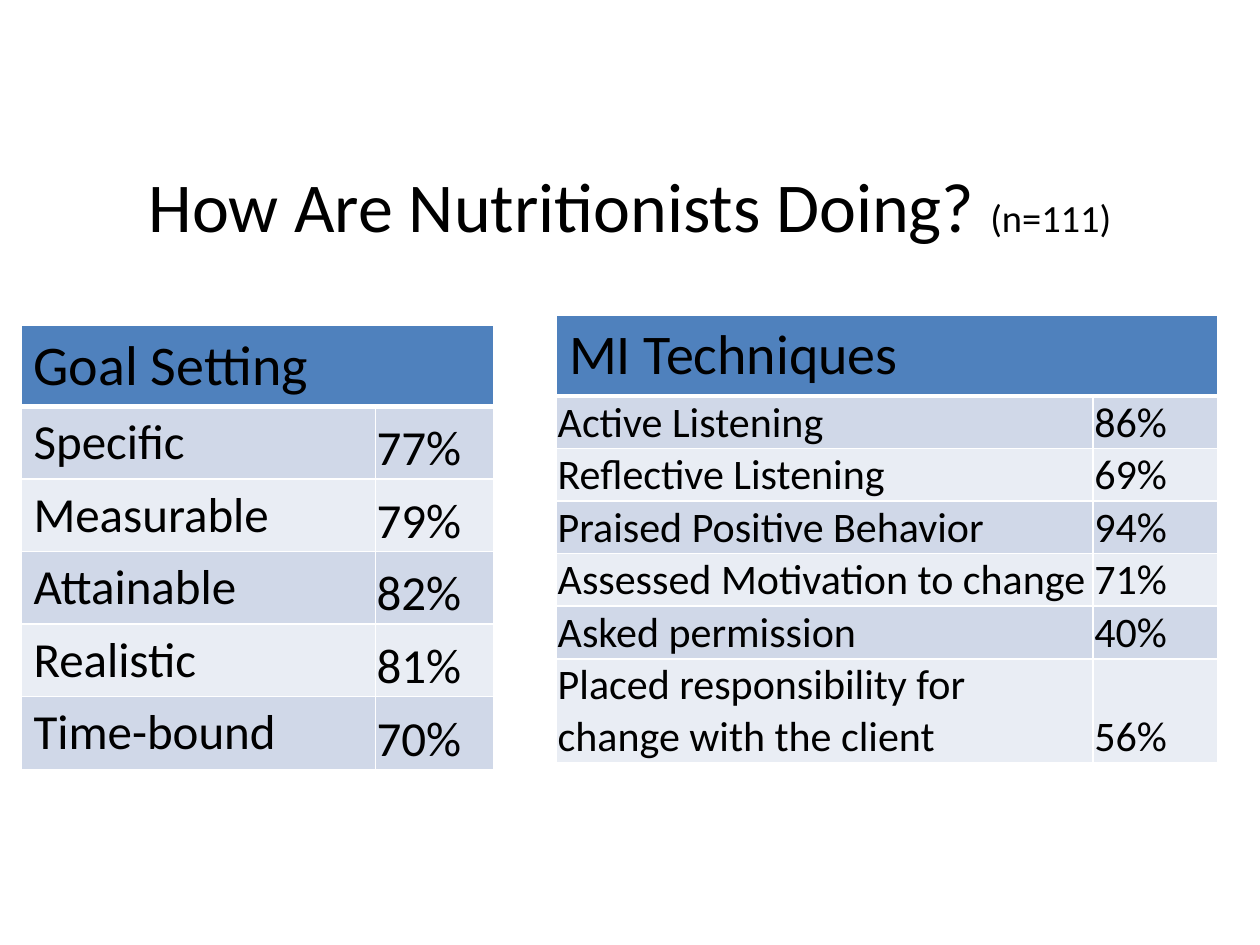
from lxml.etree import SubElement
from pptx import Presentation
from pptx.dml.color import RGBColor
from pptx.enum.text import MSO_ANCHOR, PP_ALIGN
from pptx.oxml.ns import qn
from pptx.util import Inches, Pt

BLACK = RGBColor(0x00, 0x00, 0x00)
WHITE = RGBColor(0xFF, 0xFF, 0xFF)
BLUE = RGBColor(0x4F, 0x81, 0xBD)
BANDS = [RGBColor(0xD0, 0xD8, 0xE8), RGBColor(0xE9, 0xED, 0xF4)]

GOALS = [("Specific", "77%"), ("Measurable", "79%"), ("Attainable", "82%"),
         ("Realistic", "81%"), ("Time-bound", "70%")]
SKILLS = [("Active Listening", "86%"), ("Reflective Listening", "69%"),
          ("Praised Positive Behavior", "94%"),
          ("Assessed Motivation to change", "71%"), ("Asked permission", "40%"),
          ("Placed responsibility for change with the client", "56%")]


class Deck:
    """Style and current slide; lengths are units of a 120 by 90 grid."""
    font = "Calibri"
    row = 5

    def __init__(self):
        self.file = Presentation()
        self.file.slide_width, self.file.slide_height = Inches(10), Inches(7.5)
        self.unit = self.file.slide_width / 120
        self.slide = self.file.slides.add_slide(self.file.slide_layouts[5])

    def size(self, *units):
        return [round(n * self.unit) for n in units]

    def style(self, run, size):
        run.font.name, run.font.size = self.font, Pt(size)
        run.font.bold, run.font.color.rgb = False, BLACK

    def title(self, box, parts):
        shape = self.slide.shapes.title
        shape.left, shape.top, shape.width, shape.height = self.size(*box)
        shape.text_frame.vertical_anchor = MSO_ANCHOR.MIDDLE
        para = shape.text_frame.paragraphs[0]
        para.alignment = PP_ALIGN.CENTER
        for text, size in parts:
            run = para.add_run()
            run.text = text
            self.style(run, size)

    def edges(self, cell, base):
        props = cell._tc.get_or_add_tcPr()
        for side, width in zip("LRTB", (1, 1, 1, base)):
            line = SubElement(props, qn(f"a:ln{side}"), w=str(Pt(width)))
            fill = SubElement(line, qn("a:solidFill"))
            SubElement(fill, qn("a:srgbClr"), val=str(WHITE))

    def cell(self, cell, text, size, color, tight=False, base=1):
        self.edges(cell, base)
        cell.fill.solid()
        cell.fill.fore_color.rgb = color
        if tight:
            cell.vertical_anchor = MSO_ANCHOR.BOTTOM
            cell.margin_left = cell.margin_right = cell.margin_top = Inches(0.01)
            cell.margin_bottom = 0
        cell.text_frame.text = text
        for run in cell.text_frame.paragraphs[0].runs:
            self.style(run, size)

    def table(self, left, top, cols, head, rows, size, tight):
        count = len(rows) + 1
        box = self.size(left, top, sum(cols), count * self.row)
        table = self.slide.shapes.add_table(count, 2, *box).table
        for col, width in zip(table.columns, self.size(*cols)):
            col.width = width
        # Header across both columns
        table.cell(0, 0).merge(table.cell(0, 1))
        for col, text in enumerate((head, "")):
            self.cell(table.cell(0, col), text, 32, BLUE, base=3)
        # Banded rows: label and share
        for i, (label, share) in enumerate(rows):
            band = BANDS[i % 2]
            self.cell(table.cell(i + 1, 0), label, size, band, tight)
            self.cell(table.cell(i + 1, 1), share, size, band, True)


def main():
    deck = Deck()
    # Title
    deck.title((9, 12, 102, 15),
               [("How Are Nutritionists Doing? ", 40), ("(n=111)", 22)])
    # Result tables
    deck.table(2, 31, (33.75, 11.25), "Goal Setting", GOALS, 28, False)
    deck.table(53, 30, (51.1, 11.9), "MI Techniques", SKILLS, 24, True)
    deck.file.save("out.pptx")


if __name__ == "__main__":
    main()
